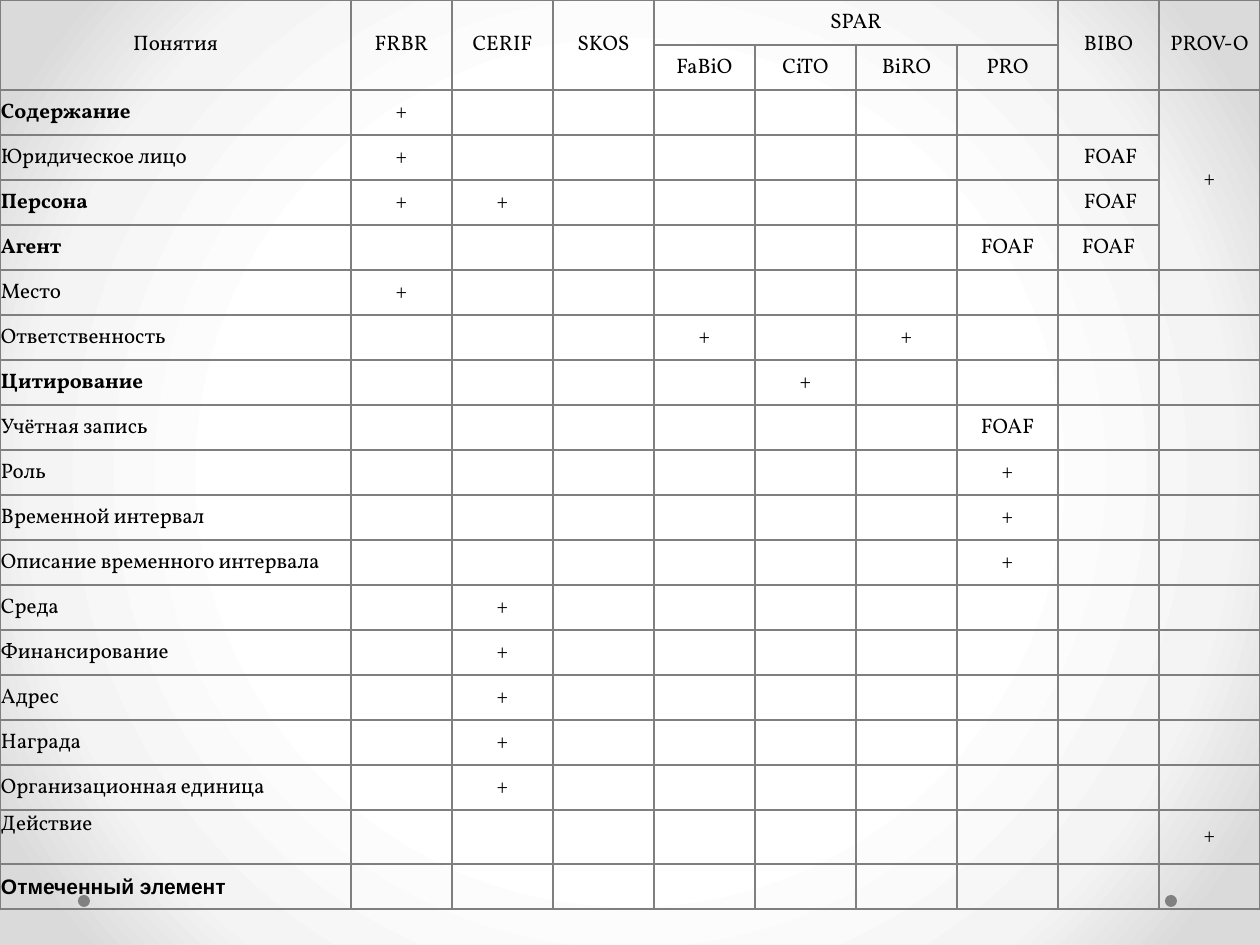
from lxml import etree
from pptx import Presentation
from pptx.dml.color import RGBColor
from pptx.enum.shapes import MSO_SHAPE
from pptx.enum.text import MSO_ANCHOR, PP_ALIGN
from pptx.oxml import parse_xml
from pptx.oxml.ns import nsdecls, qn
from pptx.util import Pt

BLACK = RGBColor(0x00, 0x00, 0x00)
WHITE = RGBColor(0xFF, 0xFF, 0xFF)
PALE = RGBColor(0xF4, 0xF4, 0xF4)
SILVER = RGBColor(0xDA, 0xDA, 0xDA)
DOT_GREY = RGBColor(0x80, 0x80, 0x80)
RULE_GREY = RGBColor(0x7F, 0x7F, 0x7F)

EMU_PER_PX = 914400 / 126
NAME_WIDTH, MARK_WIDTH = 351, 101
ROW_HEIGHT, ACTION_HEIGHT = 45, 54

# Column number of each vocabulary
VOCABULARIES = {"FRBR": 1, "CERIF": 2, "SKOS": 3, "FaBiO": 4, "CiTO": 5,
                "BiRO": 6, "PRO": 7, "BIBO": 8, "PROV-O": 9}
SPAR_PARTS = ("FaBiO", "CiTO", "BiRO", "PRO")

# Concept, bold, marks by vocabulary
CONCEPTS = [
    ("Содержание", True, {"FRBR": "+", "PROV-O": "+"}),
    ("Юридическое лицо", False, {"FRBR": "+", "BIBO": " FOAF"}),
    ("Персона", True, {"FRBR": "+", "CERIF": "+", "BIBO": " FOAF"}),
    ("Агент", True, {"PRO": "FOAF", "BIBO": "FOAF"}),
    ("Место", False, {"FRBR": "+"}),
    ("Ответственность", False, {"FaBiO": "+", "BiRO": "+"}),
    ("Цитирование", True, {"CiTO": "+"}),
    ("Учётная запись", False, {"PRO": "FOAF"}),
    ("Роль", False, {"PRO": "+"}),
    ("Временной интервал", False, {"PRO": "+"}),
    ("Описание временного интервала", False, {"PRO": "+"}),
    ("Среда", False, {"CERIF": "+"}),
    ("Финансирование", False, {"CERIF": "+"}),
    ("Адрес", False, {"CERIF": "+"}),
    ("Награда", False, {"CERIF": "+"}),
    ("Организационная единица", False, {"CERIF": "+"}),
    ("Действие", False, {"PROV-O": "+"}),
    ("Отмеченный элемент", True, {}),
]
HEADER_ROWS = 2
ACTION_ROW = HEADER_ROWS + [name for name, *_ in CONCEPTS].index("Действие")
LAST_ROW = HEADER_ROWS + len(CONCEPTS) - 1


def px(length):
    return round(length * EMU_PER_PX)


def write(cell, text, font="Vollkorn", size=12, bold=False, color=BLACK,
          align=PP_ALIGN.CENTER, anchor=MSO_ANCHOR.MIDDLE):
    cell.vertical_anchor = anchor
    para = cell.text_frame.paragraphs[0]
    para.alignment = align
    span = para.add_run()
    span.text = text
    span.font.name = font
    span.font.size = Pt(size)
    span.font.bold = bold
    span.font.color.rgb = color


class SlideBuilder:
    def __init__(self, page, rule=RULE_GREY, rule_width=1):
        self.page = page
        self.rule = rule
        self.rule_width = rule_width

    def radial_background(self, stops):
        fill = self.page.background.fill
        fill.gradient()
        gradient = self.page.element.find(".//" + qn("a:gradFill"))
        for child in list(gradient):
            gradient.remove(child)
        stop_list = etree.SubElement(gradient, qn("a:gsLst"))
        for percent, color in stops:
            stop = etree.SubElement(stop_list, qn("a:gs"), pos=str(percent * 1000))
            etree.SubElement(stop, qn("a:srgbClr"), val=str(color))
        circle = etree.SubElement(gradient, qn("a:path"), path="circle")
        sides = dict.fromkeys("ltrb", "50000")
        etree.SubElement(circle, qn("a:fillToRect"), **sides)

    def dot(self, left, top, diameter, color=DOT_GREY):
        shape = self.page.shapes.add_shape(
            MSO_SHAPE.OVAL, px(left), px(top), px(diameter), px(diameter))
        shape.shadow.inherit = False
        shape.fill.solid()
        shape.fill.fore_color.rgb = color
        shape.line.fill.background()

    def grid(self, left, top, widths, heights):
        table = self.page.shapes.add_table(
            len(heights), len(widths), px(left), px(top),
            px(sum(widths)), px(sum(heights))).table
        table.first_row = table.horz_banding = False
        for column, width in zip(table.columns, widths):
            column.width = px(width)
        for row, height in zip(table.rows, heights):
            row.height = px(height)
        for cell in table.iter_cells():
            self.style_cell(cell)
        return table

    def style_cell(self, cell):
        cell.margin_left = cell.margin_right = cell.margin_top = px(1)
        cell.margin_bottom = 0
        cell.fill.background()
        properties = cell._tc.get_or_add_tcPr()
        for index, side in enumerate("LRTB"):
            properties.insert(index, parse_xml(
                f'<a:ln{side} {nsdecls("a")} w="{Pt(self.rule_width)}">'
                f'<a:solidFill><a:srgbClr val="{self.rule}"/></a:solidFill>'
                f'</a:ln{side}>'))


def fill_header(table):
    for column, name in enumerate(["Понятия", *VOCABULARIES]):
        in_spar = name in SPAR_PARTS
        if not in_spar:
            table.cell(0, column).merge(table.cell(1, column))
        write(table.cell(1 if in_spar else 0, column), name)
    first, last = (VOCABULARIES[SPAR_PARTS[end]] for end in (0, -1))
    table.cell(0, first).merge(table.cell(0, last))
    write(table.cell(0, first), "SPAR")


def fill_concepts(table):
    prov = VOCABULARIES["PROV-O"]
    table.cell(HEADER_ROWS, prov).merge(table.cell(HEADER_ROWS + 3, prov))
    for row, (name, bold, marks) in enumerate(CONCEPTS, HEADER_ROWS):
        write(table.cell(row, 0), name, bold=bold, align=PP_ALIGN.LEFT,
              font="Arial" if row == LAST_ROW else "Vollkorn",
              anchor=MSO_ANCHOR.TOP if row == ACTION_ROW else MSO_ANCHOR.MIDDLE)
        for vocabulary, mark in marks.items():
            write(table.cell(row, VOCABULARIES[vocabulary]), mark)


def main():
    deck = Presentation()
    deck.slide_width, deck.slide_height = px(1260), px(945)
    builder = SlideBuilder(deck.slides.add_slide(deck.slide_layouts[6]))

    # Backdrop
    builder.radial_background([(0, WHITE), (50, WHITE), (76, PALE),
                               (92, SILVER), (100, SILVER)])
    for left in (1165, 78):
        builder.dot(left, 895, 12)

    # Comparison of vocabularies
    widths = [NAME_WIDTH] + [MARK_WIDTH] * len(VOCABULARIES)
    heights = [ACTION_HEIGHT if row == ACTION_ROW else ROW_HEIGHT
               for row in range(LAST_ROW + 1)]
    table = builder.grid(0, 0, widths, heights)
    fill_header(table)
    fill_concepts(table)

    deck.save("out.pptx")


if __name__ == "__main__":
    main()
